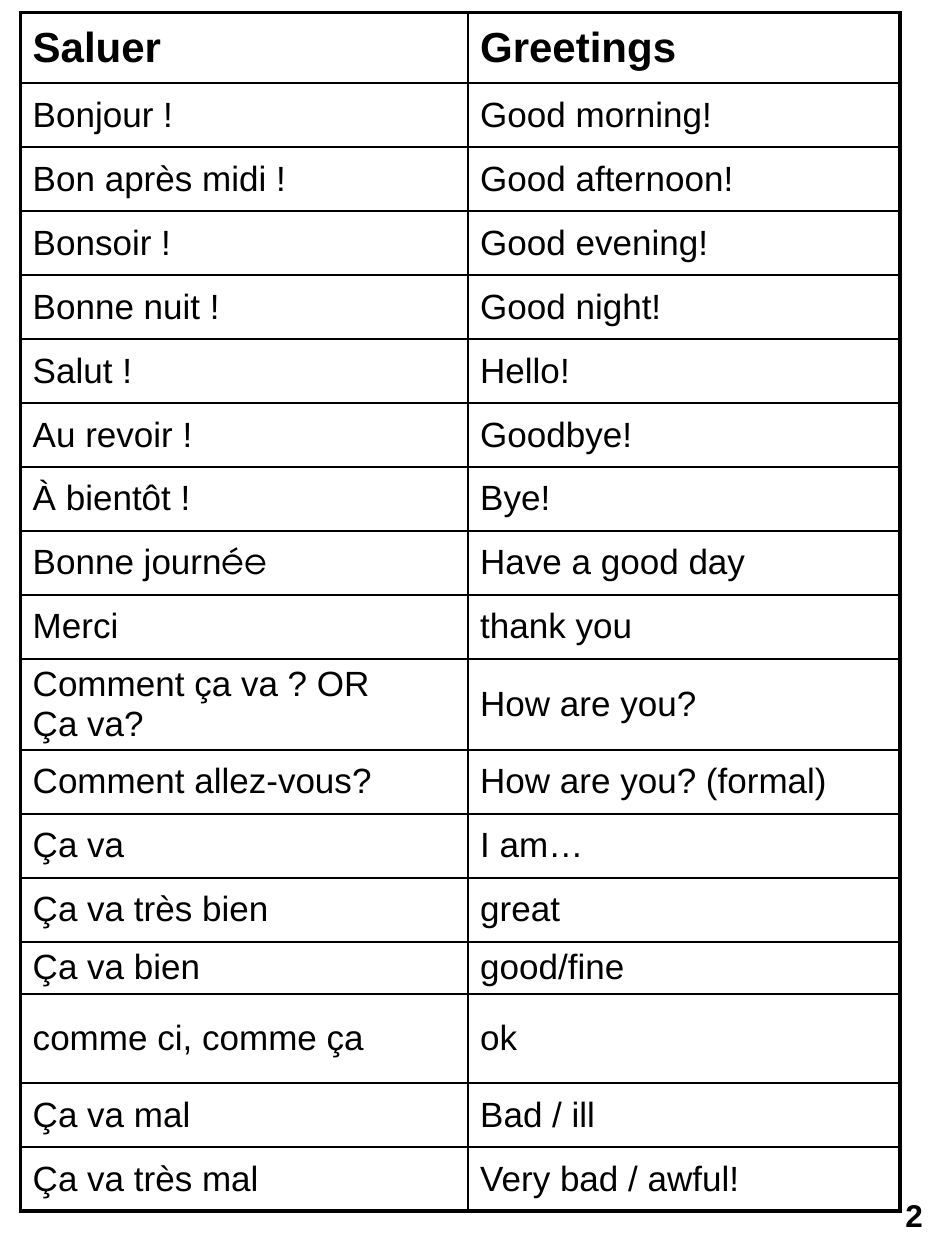
from lxml import etree
from pptx import Presentation
from pptx.dml.color import RGBColor
from pptx.enum.shapes import MSO_SHAPE
from pptx.enum.text import MSO_ANCHOR, PP_ALIGN
from pptx.oxml.ns import qn
from pptx.util import Cm, Pt

ROUNDED = MSO_SHAPE.ROUNDED_RECTANGLE
MIDDLE = MSO_ANCHOR.MIDDLE
CENTER = PP_ALIGN.CENTER
BLACK = RGBColor(0, 0, 0)
THICK, THIN = Pt(2.25), Pt(1)
ACCENT_FONT = "TeX Gyre Adventor"

PHRASES = [
    ("Saluer", "Greetings"),
    ("Bonjour !", "Good morning!"),
    ("Bon après midi !", "Good afternoon!"),
    ("Bonsoir !", "Good evening!"),
    ("Bonne nuit !", "Good night!"),
    ("Salut !", "Hello!"),
    ("Au revoir !", "Goodbye!"),
    ("À bientôt !", "Bye!"),
    ("Bonne journ", "Have a good day"),
    ("Merci", "thank you"),
    ("Comment ça va ? OR\nÇa va?", "How are you?"),
    ("Comment allez-vous?", "How are you? (formal)"),
    ("Ça va", "I am…"),
    ("Ça va très bien", "great"),
    ("Ça va bien", "good/fine"),
    ("comme ci, comme ça", "ok"),
    ("Ça va mal", "Bad / ill"),
    ("Ça va très mal", "Very bad / awful!"),
]
ROW_HEIGHT = Cm(1.29)
SPECIAL_HEIGHTS = {0: Cm(1.42), 10: Cm(1.8), 14: Cm(0.53), 15: Cm(1.8)}
LAST_ROW = len(PHRASES) - 1


def write(para, text, size=20, bold=False, font="Arial"):
    for number, line in enumerate(text.split("\n")):
        if number:
            para.add_line_break()
        span = para.add_run()
        span.text = line
        span.font.size = Pt(size)
        span.font.bold = bold
        span.font.name = font
        span.font.color.rgb = BLACK


def set_borders(cell, widths):
    properties = cell._tc.get_or_add_tcPr()
    for side, width in widths.items():
        line = etree.SubElement(properties, qn(f"a:ln{side}"), w=str(width))
        fill = etree.SubElement(line, qn("a:solidFill"))
        etree.SubElement(fill, qn("a:srgbClr"), val=str(BLACK))


deck = Presentation()
deck.slide_width = Cm(19.05)
deck.slide_height = Cm(25.4)
page = deck.slides.add_slide(deck.slide_layouts[6])

page_number = page.shapes.add_shape(ROUNDED, Cm(17.73), Cm(23.9), Cm(1.4), Cm(1.19))
page_number.shadow.inherit = False
page_number.fill.background()
page_number.line.fill.background()
page_number.text_frame.vertical_anchor = MIDDLE
para = page_number.text_frame.paragraphs[0]
para.alignment = CENTER
write(para, "2", size=18, bold=True)

frame = page.shapes.add_table(len(PHRASES), 2, Cm(0.41), Cm(0.25), Cm(17.73), Cm(24.38))
table = frame.table
table.first_row = False
table.horz_banding = False
table.columns[0].width = Cm(9.02)
table.columns[1].width = Cm(8.71)

for row, phrases in enumerate(PHRASES):
    heading = row == 0
    table.rows[row].height = SPECIAL_HEIGHTS.get(row, ROW_HEIGHT)
    for column, phrase in enumerate(phrases):
        cell = table.cell(row, column)
        cell.vertical_anchor = MIDDLE
        cell.margin_left = cell.margin_right = Cm(0.25)
        cell.margin_top = cell.margin_bottom = Cm(0.13)
        set_borders(cell, {
            "L": THICK if column == 0 else THIN,
            "R": THICK if column == 1 else THIN,
            "T": THICK if heading else THIN,
            "B": THICK if row == LAST_ROW else THIN,
        })
        cell.fill.background()
        para = cell.text_frame.paragraphs[0]
        spacing = etree.SubElement(para._p.get_or_add_pPr(), qn("a:spcBef"))
        etree.SubElement(spacing, qn("a:spcPct"), val="20000")
        write(para, phrase, size=24 if heading else 20, bold=heading)
        if phrase == "Bonne journ":
            write(para, "ée", font=ACCENT_FONT)

deck.save("out.pptx")
